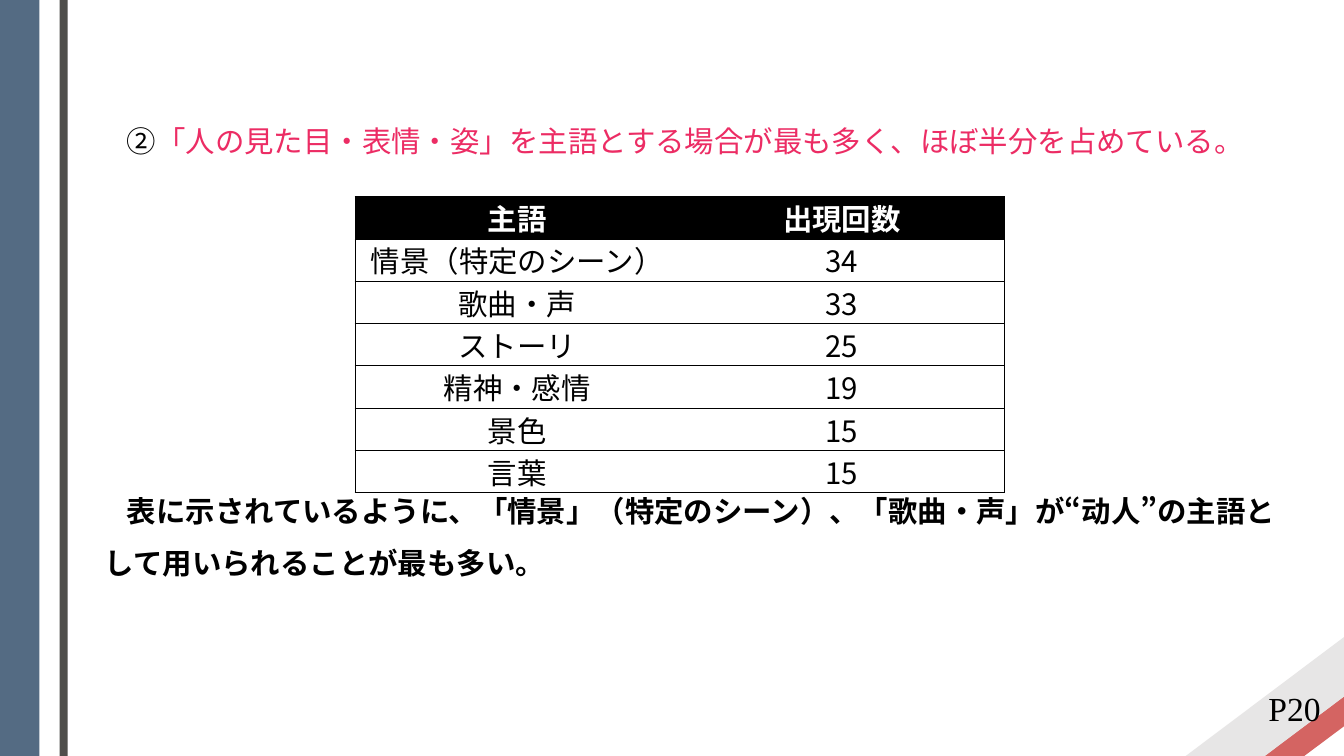
from pptx import Presentation
from pptx.dml.color import RGBColor
from pptx.enum import lang, shapes, text
from pptx.oxml import ns, xmlchemy
from pptx.util import Inches, Pt

BLACK = RGBColor(0x00, 0x00, 0x00)
WHITE = RGBColor(0xFF, 0xFF, 0xFF)
PINK = RGBColor(0xEC, 0x2C, 0x64)
RED = RGBColor(0xD4, 0x64, 0x62)
GREY = RGBColor(0xE7, 0xE6, 0xE6)
CHARCOAL = RGBColor(0x4F, 0x4E, 0x4B)
BLUE = RGBColor(0x54, 0x6B, 0x83)

JAPANESE, CHINESE, LATIN = "Noto Sans CJK JP", "Noto Sans CJK SC", "Times New Roman"
LANGUAGES = {
    JAPANESE: lang.MSO_LANGUAGE_ID.JAPANESE,
    CHINESE: lang.MSO_LANGUAGE_ID.SIMPLIFIED_CHINESE,
    LATIN: lang.MSO_LANGUAGE_ID.ENGLISH_US,
}
BODY_SIZE = 21
PAGE_NUMBER = "P20"
FINDING = [
    ("②", JAPANESE, BLACK),
    ("「人の見た目・表情・姿」を主語とする場合が最も多く、ほぼ半分を占めている。", JAPANESE, PINK),
]
CONCLUSION = [
    ("表に示されているように、「情景」（特定のシーン）、「歌曲・声」が“", JAPANESE, BLACK),
    ("动人", CHINESE, BLACK),
    ("”の主語として用いられることが最も多い。", JAPANESE, BLACK),
]
SUBJECT_COUNTS = [
    ("主語", "出現回数"),
    ("情景（特定のシーン）", "34"),
    ("歌曲・声", "33"),
    ("ストーリ", "25"),
    ("精神・感情", "19"),
    ("景色", "15"),
    ("言葉", "15"),
]
CORNER_STRIPES = [(0.79, 0.59, RED), (1.57, 1.18, GREY)]
SIDE_BARS = [(0.59, 0.08, CHARCOAL), (0, 0.39, BLUE)]
SLIDE_WIDTH, SLIDE_HEIGHT = 13.33, 7.5
ROW_HEIGHT, COLUMN_WIDTH = 0.42, 3.22


def style_run(run, face, size, color, bold=False):
    """Format a run, using one face for Latin and East Asian text."""
    font = run.font
    font.name, font.size, font.bold = face, Pt(size), bold
    font.language_id = LANGUAGES[face]
    font.color.rgb = color
    east_asian = xmlchemy.OxmlElement("a:ea")
    east_asian.set("typeface", face)
    font._element.find(ns.qn("a:latin")).addnext(east_asian)


def add_block(slide, preset, left, top, width, height, color):
    """Add a flat filled shape without an outline."""
    block = slide.shapes.add_shape(
        preset, Inches(left), Inches(top), Inches(width), Inches(height))
    block.shadow.inherit = False
    block.fill.solid()
    block.fill.fore_color.rgb = color
    block.line.fill.background()
    return block


def write_paragraph(paragraph, pieces, bold):
    """Write an indented body paragraph from its pieces."""
    paragraph.line_spacing = 1.5
    paragraph._p.get_or_add_pPr().set("indent", str(Inches(0.22)))
    for words, face, color in pieces:
        run = paragraph.add_run()
        run.text = words
        style_run(run, face, BODY_SIZE, color, bold)


def set_borders(cell, ruled_sides):
    """Rule the named sides of a cell in black and clear the others."""
    properties = cell._tc.get_or_add_tcPr()
    for position, side in enumerate("LRTB"):
        border = xmlchemy.OxmlElement(f"a:ln{side}")
        border.set("w", str(Pt(0.5)))
        if side in ruled_sides:
            fill = xmlchemy.OxmlElement("a:solidFill")
            color = xmlchemy.OxmlElement("a:srgbClr")
            color.set("val", str(BLACK))
            fill.append(color)
        else:
            fill = xmlchemy.OxmlElement("a:noFill")
        border.append(fill)
        properties.insert(position, border)


def add_counts(slide):
    """Add the table of subjects and their counts."""
    rows, columns = len(SUBJECT_COUNTS), len(SUBJECT_COUNTS[0])
    counts = slide.shapes.add_table(
        rows, columns, Inches(3.52), Inches(1.95),
        Inches(COLUMN_WIDTH * columns), Inches(ROW_HEIGHT * rows)).table
    for column in counts.columns:
        column.width = Inches(COLUMN_WIDTH)
    for r, entries in enumerate(SUBJECT_COUNTS):
        counts.rows[r].height = Inches(ROW_HEIGHT)
        header = r == 0
        for c, entry in enumerate(entries):
            cell = counts.cell(r, c)
            cell.margin_left = cell.margin_right = Inches(0.07)
            cell.margin_top = cell.margin_bottom = 0
            cell.fill.solid()
            cell.fill.fore_color.rgb = BLACK if header else WHITE
            set_borders(cell, "TB" + "LR"[c])
            paragraph = cell.text_frame.paragraphs[0]
            paragraph.text = entry
            paragraph.alignment = text.PP_ALIGN.CENTER
            style_run(paragraph.runs[0], JAPANESE, BODY_SIZE,
                      WHITE if header else BLACK, header)


def main():
    """Build the slide and save it."""
    deck = Presentation()
    deck.slide_width, deck.slide_height = Inches(SLIDE_WIDTH), Inches(SLIDE_HEIGHT)
    slide = deck.slides.add_slide(deck.slide_layouts[6])

    for width, height, color in CORNER_STRIPES:
        stripe = add_block(slide, shapes.MSO_SHAPE.DIAGONAL_STRIPE,
                           SLIDE_WIDTH - width, SLIDE_HEIGHT - height,
                           width, height, color)
        stripe.rotation = 180

    page = slide.shapes.add_textbox(
        Inches(12.49), Inches(6.72), Inches(0.7), Inches(0.61)).text_frame
    page.word_wrap = False
    page.margin_left = page.margin_right = 0
    page.vertical_anchor = text.MSO_ANCHOR.MIDDLE
    page.text = PAGE_NUMBER
    page.paragraphs[0].alignment = text.PP_ALIGN.CENTER
    style_run(page.paragraphs[0].runs[0], LATIN, 24, BLACK)

    body = slide.shapes.add_textbox(
        Inches(0.94), Inches(1), Inches(11.81), Inches(5.91)).text_frame
    body.word_wrap = True
    write_paragraph(body.paragraphs[0], FINDING, False)
    conclusion = body.add_paragraph()
    conclusion.space_before = Pt(226)
    write_paragraph(conclusion, CONCLUSION, True)

    for left, width, color in SIDE_BARS:
        add_block(slide, shapes.MSO_SHAPE.RECTANGLE, left, 0, width, SLIDE_HEIGHT, color)

    add_counts(slide)
    deck.save("out.pptx")


if __name__ == "__main__":
    main()
